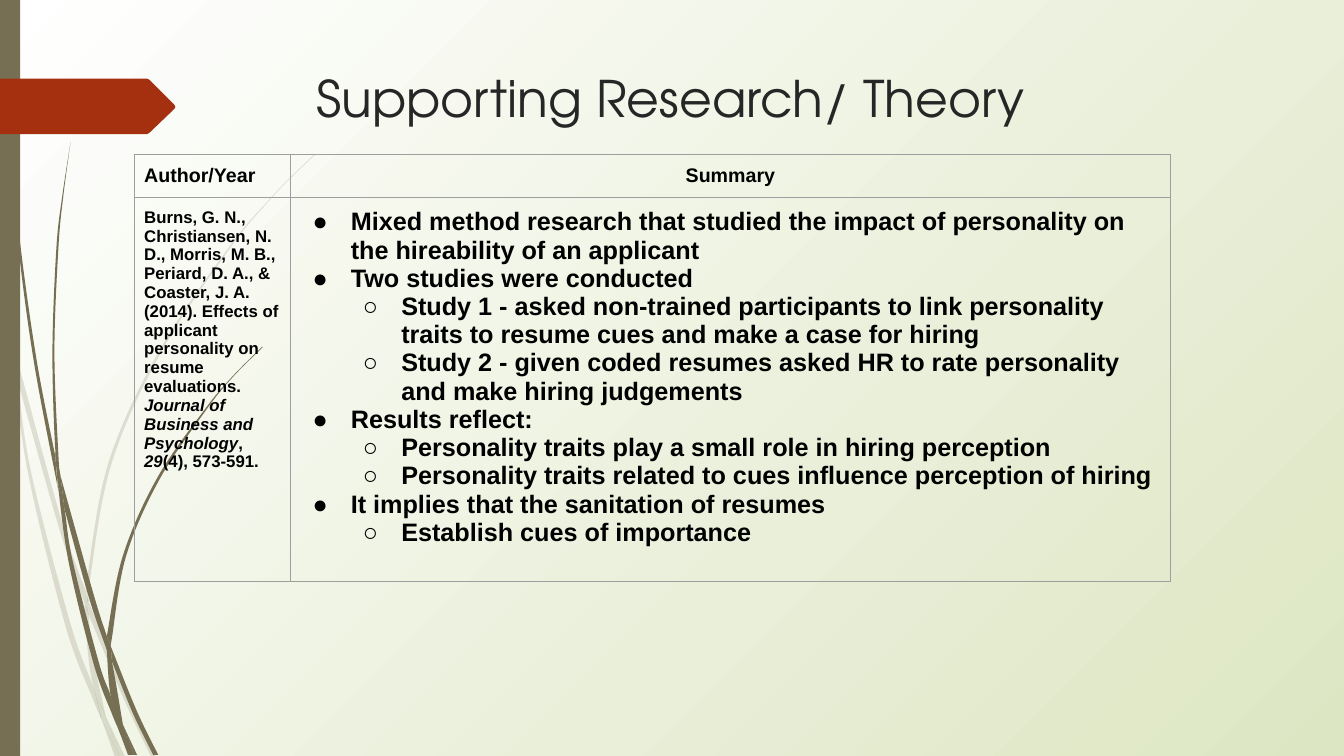
import pptx
import pptx.dml.color
import pptx.enum.shapes
import pptx.enum.text
import pptx.oxml
import pptx.oxml.ns
import pptx.util

Inches = pptx.util.Inches
RGBColor = pptx.dml.color.RGBColor
qn = pptx.oxml.ns.qn

OLIVE = RGBColor(0x76, 0x6F, 0x54)
RUST = RGBColor(0xA5, 0x30, 0x10)
WHITE = RGBColor(0xFF, 0xFF, 0xFF)
LIME = RGBColor(0xDD, 0xE6, 0xC3)
DARK = RGBColor(0x26, 0x26, 0x26)
BLACK = RGBColor(0, 0, 0)
GRAY = RGBColor(0x9E, 0x9E, 0x9E)
SPACE = 'xmlns:a="http://schemas.openxmlformats.org/drawingml/2006/main"'

PALE = [
    ([(0.11, 3.5), (0.09, 3.22), (0, 2.82)], [(0, 2.99), (0.1, 3.44), (0.11, 3.5)]),
    ([(0.14, 3.45), (0.62, 5.2), (0.85, 5.86)],
     [(0.84, 5.99), (0.58, 5.22), (0.17, 3.76)]),
    ([(0.88, 5.96), (0.92, 6.07), (1.27, 6.92), (1.55, 7.51)],
     [(1.5, 7.51), (1.23, 6.94), (0.88, 6.1)]),
    ([(1.05, 7.11), (1.24, 7.51)], [(1.19, 7.51), (1.05, 7.11)]),
    ([(0.11, 3.5), (0.17, 3.76), (0.31, 4.69), (0.7, 6.19), (0.93, 6.83), (1.01, 7.14)],
     [(1.01, 7.14), (0.92, 6.93), (0.65, 6.21), (0.28, 4.7), (0.11, 3.5)]),
    ([(0.84, 5.99), (0.88, 6.1), (0.91, 6.46), (1.05, 7.11)],
     [(1.05, 7.11), (0.93, 6.83), (0.87, 6.46), (0.84, 5.99)]),
    ([(0.88, 5.96), (0.88, 5.84), (1.1, 4.62), (1.6, 3.49), (2.29, 2.45),
      (2.68, 1.98), (2.9, 1.75), (3.12, 1.54)],
     [(3.12, 1.53), (2.89, 1.75), (2.68, 1.97), (2.28, 2.44), (1.58, 3.48),
      (1.07, 4.61), (0.85, 5.84)]),
    ([(1.01, 7.14), (1.14, 7.51)], [(1.19, 7.51), (1.01, 7.14)]),
    ([(0.88, 6.1), (0.88, 5.96)], [(0.85, 5.86), (0.84, 5.99)]),
    ([(0.93, 6.83), (0.99, 7.07), (1.01, 7.14), (1.19, 7.51)],
     [(1.19, 7.51), (1.05, 7.11), (0.96, 6.92), (0.93, 6.83)]),
]
DEEP = [
    ([(0.03, 0), (0.04, 0.48), (0.07, 1.1), (0.17, 2.33), (0.33, 3.55),
      (0.56, 4.77), (0.57, 4.81)],
     [(0.55, 4.53), (0.36, 3.55), (0.19, 2.32), (0.08, 1.09), (0.05, 0.48), (0.04, 0)]),
    ([(0.6, 4.72), (0.93, 5.9), (1.06, 6.31)],
     [(1.06, 6.45), (0.88, 5.92), (0.64, 5.05)]),
    ([(1.1, 6.41), (1.13, 6.49), (1.36, 7.06), (1.57, 7.49)],
     [(1.52, 7.49), (1.32, 7.08), (1.11, 6.56)]),
    ([(0.57, 4.77), (0.64, 5.05), (0.72, 5.56), (0.98, 6.57), (1.1, 6.91), (1.17, 7.22)],
     [(1.17, 7.22), (1.11, 7.08), (0.93, 6.59), (0.68, 5.57), (0.57, 4.77)]),
    ([(0.6, 4.72), (0.58, 4.53), (0.54, 3.49), (0.58, 2.45), (0.63, 1.93), (0.7, 1.41)],
     [(0.7, 1.41), (0.62, 1.93), (0.56, 2.45), (0.52, 3.49), (0.55, 4.49), (0.6, 4.72)]),
    ([(1.22, 7.19), (1.36, 7.49)], [(1.33, 7.49), (1.22, 7.19)]),
    ([(0.57, 4.77), (0.64, 5.05)], [(0.6, 4.72), (0.55, 4.49), (0.57, 4.77)]),
    ([(1.1, 6.41), (1.11, 6.33), (1.25, 5.52), (1.58, 4.76), (2.05, 4.06),
      (2.31, 3.74), (2.61, 3.44)],
     [(2.6, 3.44), (2.31, 3.73), (2.04, 4.05), (1.56, 4.74), (1.22, 5.51), (1.06, 6.31)]),
    ([(1.17, 7.22), (1.27, 7.49)], [(1.31, 7.49), (1.17, 7.22)]),
    ([(1.06, 6.45), (1.1, 6.91), (1.22, 7.19)],
     [(1.22, 7.19), (1.11, 6.56), (1.06, 6.45)]),
    ([(1.06, 6.45), (1.11, 6.56)], [(1.1, 6.41), (1.06, 6.31)]),
    ([(1.1, 6.91), (1.17, 7.22), (1.3, 7.49)],
     [(1.33, 7.49), (1.22, 7.19), (1.1, 6.91)]),
]
ARROW = [(0, 0.78), (1.46, 0.78), (1.48, 0.79), (1.73, 1.04), (1.74, 1.06),
         (1.73, 1.08), (1.48, 1.32), (1.46, 1.33), (0, 1.33)]

SOURCE = [
    ("Burns, G. N., Christiansen, N. D., Morris, M. B., Periard, D. A., & "
     "Coaster, J. A. (2014). Effects of applicant personality on resume "
     "evaluations. ", False),
    ("Journal of Business and Psychology", True),
    (", ", False),
    ("29", True),
    ("(4), 573-591.", False),
]
POINTS = [
    (0, "Mixed method research that studied the impact of personality on "
        "the hireability of an applicant"),
    (0, "Two studies were conducted"),
    (1, "Study 1 - asked non-trained participants to link personality "
        "traits to resume cues and make a case for hiring"),
    (1, "Study 2 - given coded resumes asked HR to rate personality and "
        "make hiring judgements"),
    (0, "Results reflect:"),
    (1, "Personality traits play a small role in hiring perception"),
    (1, "Personality traits related to cues influence perception of hiring"),
    (0, "It implies that the sanitation of resumes"),
    (1, "Establish cues of importance"),
]


def node(xml):
    return pptx.oxml.parse_xml(xml.replace(">", f" {SPACE}>", 1))


def paint(slide):
    fill = slide.background.fill
    fill.gradient()
    for stop, color in zip(fill.gradient_stops, (WHITE, LIME)):
        stop.color.rgb = color
    grad = next(slide._element.iter(qn("a:gradFill")))
    grad.replace(grad.find(qn("a:lin")), node(
        '<a:path path="circle"><a:fillToRect r="100000" b="100000"/></a:path>'))


def plain(shape, color, alpha=100):
    shape.shadow.inherit = False
    shape.fill.solid()
    shape.fill.fore_color.rgb = color
    shape.line.fill.background()
    if alpha < 100:
        tint = next(shape._element.spPr.iter(qn("a:srgbClr")))
        tint.append(node(f'<a:alpha val="{alpha * 1000}"></a:alpha>'))


def outline(slide, dots, color, alpha=100):
    spots = [(Inches(x), Inches(y)) for x, y in dots]
    form = slide.shapes.build_freeform(*spots[0])
    form.add_line_segments(spots[1:], close=True)
    shape = form.convert_to_shape()
    plain(shape, color, alpha)
    return shape


def bend(edge):
    ends = [edge[0], *edge, edge[-1]]
    dots = []
    for a, b, c, d in zip(ends, ends[1:], ends[2:], ends[3:]):
        dots += [tuple(q + (r - p) / 6 for p, q, r in zip(a, b, c)),
                 tuple(r - (s - q) / 6 for q, r, s in zip(b, c, d)), c]
    return dots


def blade(slide, left, right, alpha):
    dots = [left[0], *bend(left)]
    if left[-1] != right[0]:
        dots += [left[-1], right[0], right[0]]
    shape = outline(slide, dots + bend(right), OLIVE, alpha)
    lines = list(shape._element.iter(qn("a:lnTo")))
    for trio in zip(lines[::3], lines[1::3], lines[2::3]):
        curve = node("<a:cubicBezTo></a:cubicBezTo>")
        trio[0].addprevious(curve)
        for line in trio:
            curve.append(line[0])
            line.getparent().remove(line)


def write(para, text, size, font="Arial", color=BLACK, bold=True, slant=False):
    run = para.add_run()
    run.text = text
    run.font.size = pptx.util.Pt(size)
    run.font.name = font
    run.font.color.rgb = color
    run.font.bold = bold
    run.font.italic = slant


def title(slide, text):
    box = slide.shapes.add_textbox(Inches(3.04), Inches(0.62), Inches(7.26), Inches(0.78))
    box.text_frame.word_wrap = True
    box.text_frame.vertical_anchor = pptx.enum.text.MSO_ANCHOR.TOP
    write(box.text_frame.paragraphs[0], text, 36, "TeX Gyre Adventor", DARK, False)


def bullet(para, level):
    para.level = level
    props = para._p.get_or_add_pPr()
    props.set("marL", str(Inches(0.5 + 0.5 * level)))
    props.set("indent", str(Inches(-0.38)))
    for xml in (f'<a:buClr><a:srgbClr val="{BLACK}"/></a:buClr>',
                '<a:buFont typeface="Arial"></a:buFont>',
                f'<a:buChar char="{"●○"[level]}"></a:buChar>'):
        props.append(node(xml))


def frame(cell):
    cell.margin_left = cell.margin_right = Inches(0.1)
    cell.margin_top = cell.margin_bottom = Inches(0.1)
    props = cell._tc.get_or_add_tcPr()
    for side in "LRTB":
        props.append(node(f'<a:ln{side} w="9525"><a:solidFill><a:srgbClr val="{GRAY}"/>'
                          f'</a:solidFill></a:ln{side}>'))
    cell.fill.background()


def grid(slide):
    wides, high = (1.55, 8.73), 0.42
    table = slide.shapes.add_table(2, 2, Inches(1.33), Inches(1.53),
                                   Inches(sum(wides)), Inches(2 * high)).table
    table.first_row = table.horz_banding = False
    for col, wide in zip(table.columns, wides):
        col.width = Inches(wide)
    for cell in table.iter_cells():
        frame(cell)
    for i, text in enumerate(("Author/Year", "Summary")):
        write(table.cell(0, i).text_frame.paragraphs[0], text, 14)
    center = pptx.enum.text.PP_ALIGN.CENTER
    table.cell(0, 1).text_frame.paragraphs[0].alignment = center
    for text, slant in SOURCE:
        write(table.cell(1, 0).text_frame.paragraphs[0], text, 12, slant=slant)
    body = table.cell(1, 1).text_frame
    for i, (level, text) in enumerate(POINTS):
        para = body.add_paragraph() if i else body.paragraphs[0]
        bullet(para, level)
        write(para, text, 18)


def main():
    deck = pptx.Presentation()
    deck.slide_width, deck.slide_height = Inches(13.33), Inches(7.5)
    slide = deck.slides.add_slide(deck.slide_layouts[6])
    paint(slide)
    for group, alpha in ((PALE, 20), (DEEP, 100)):
        for left, right in group:
            blade(slide, left, right, alpha)
    bar = slide.shapes.add_shape(pptx.enum.shapes.MSO_SHAPE.RECTANGLE,
                                 0, 0, Inches(0.2), Inches(7.5))
    plain(bar, OLIVE)
    outline(slide, ARROW, RUST)
    title(slide, "Supporting Research/ Theory")
    grid(slide)
    deck.save("out.pptx")


if __name__ == "__main__":
    main()
